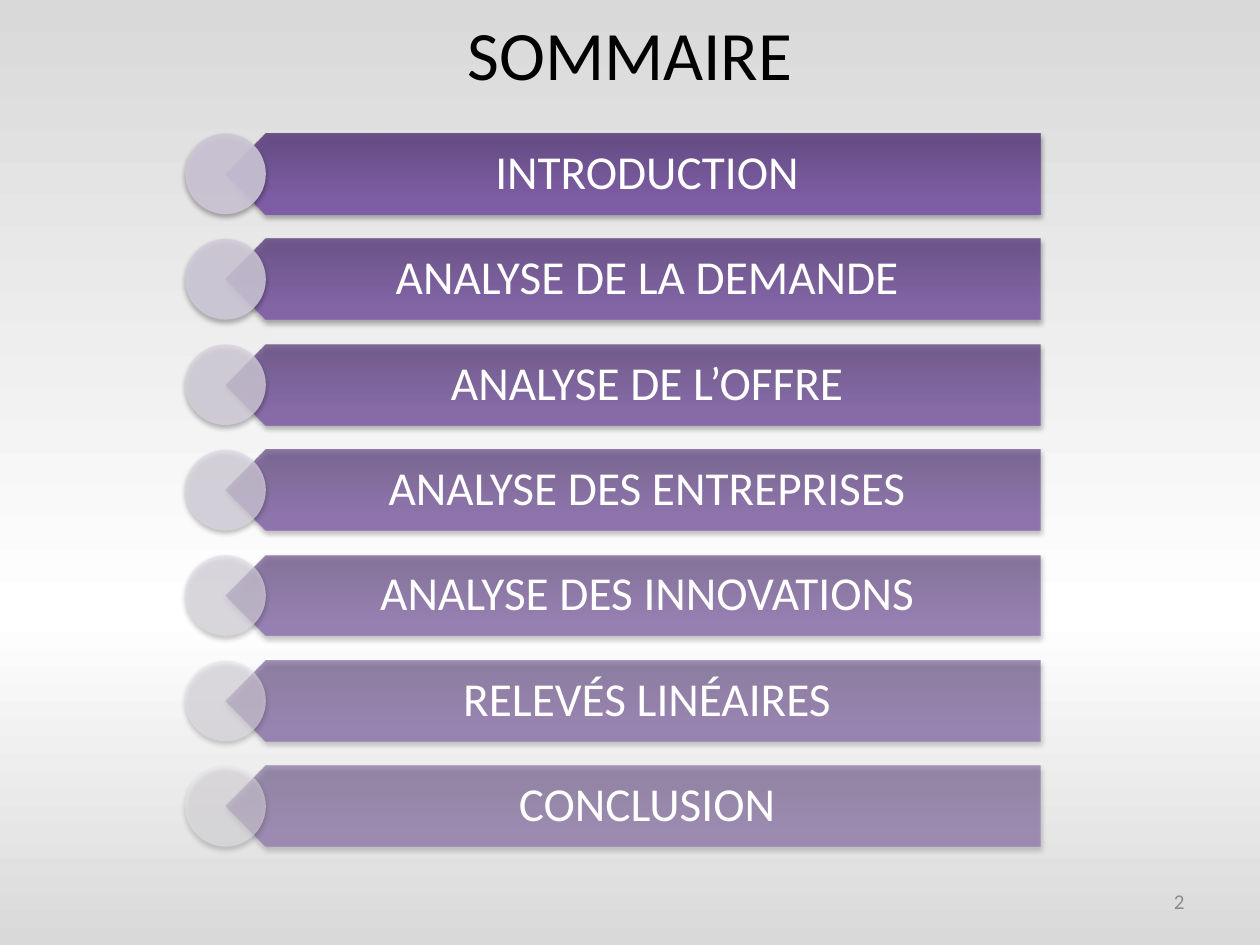
from dataclasses import dataclass

from lxml import etree
from pptx import Presentation
from pptx.dml.color import RGBColor
from pptx.enum import shapes, text
from pptx.oxml.ns import qn
from pptx.util import Inches, Pt

CHAPTERS = [
    "INTRODUCTION",
    "ANALYSE DE LA DEMANDE",
    "ANALYSE DE L’OFFRE",
    "ANALYSE DES ENTREPRISES",
    "ANALYSE DES INNOVATIONS",
    "RELEVÉS LINÉAIRES",
    "CONCLUSION",
]
FIRST_TOP, LAST_TOP, BAR_HEIGHT = 1.06, 6.08, 0.64


@dataclass(frozen=True)
class Theme:
    font: str = "Calibri"
    title_size: float = 39.6
    chapter_size: float = 27
    number_size: float = 12
    title_color: str = "000000"
    chapter_color: str = "FFFFFF"
    number_color: str = "8C8C8C"
    shadow_color: str = "000000"
    backdrop: tuple = ((0, "D9D9D9"), (65, "FFFFFF"), (100, "D9D9D9"))
    bar: tuple = ((0, "5F4480"), (80, "7B58A6"), (100, "7C57A8"))
    first_dot: tuple = (0xCD, 0xC6, 0xD7)
    last_dot: tuple = (0xED, 0xEA, 0xF0)
    first_opacity: float = 90
    last_opacity: float = 50


def blend(start, end, share):
    return start + (end - start) * share


def set_opacity(color_node, opacity):
    etree.SubElement(color_node, qn("a:alpha"), val=str(round(opacity * 1000)))


def add_color(parent, color, opacity=100):
    node = etree.SubElement(parent, qn("a:srgbClr"), val=color)
    if opacity < 100:
        set_opacity(node, opacity)


class Summary:
    def __init__(self, slide, theme):
        self.slide = slide
        self.theme = theme

    def gradient(self, fill, owner, stops, angle, opacity=100):
        """Fill with any number of stops; the angle runs clockwise."""
        fill.gradient()
        fill.gradient_angle = 360 - angle
        stop_list = owner.find(".//" + qn("a:gsLst"))
        for old_stop in list(stop_list):
            stop_list.remove(old_stop)
        for position, color in stops:
            stop = etree.SubElement(stop_list, qn("a:gs"), pos=str(position * 1000))
            add_color(stop, color, opacity)

    def shadow(self, shape):
        shape.shadow.inherit = False
        effects = shape._element.spPr.find(qn("a:effectLst"))
        outer = etree.SubElement(
            effects, qn("a:outerShdw"), blurRad=str(Pt(3.1)), dist=str(Pt(1.8)),
            dir="5400000", rotWithShape="0")
        add_color(outer, self.theme.shadow_color, 35)

    def set_words(self, frame, words, size, color, align):
        frame.word_wrap = True
        frame.vertical_anchor = text.MSO_ANCHOR.MIDDLE
        frame.text = words
        paragraph = frame.paragraphs[0]
        paragraph.alignment = align
        font = paragraph.runs[0].font
        font.name = self.theme.font
        font.size = Pt(size)
        font.color.rgb = RGBColor.from_string(color)
        return paragraph

    def background(self):
        self.gradient(self.slide.background.fill, self.slide._element,
                      self.theme.backdrop, 90)

    def title(self, words):
        title = self.slide.shapes.title
        title.left, title.top = Inches(0), Inches(0.14)
        title.width, title.height = Inches(10), Inches(0.55)
        self.set_words(title.text_frame, words, self.theme.title_size,
                       self.theme.title_color, text.PP_ALIGN.CENTER)

    def bar(self, group, top, opacity):
        bar = group.shapes.add_shape(
            shapes.MSO_SHAPE.PENTAGON, Inches(1.79), top, Inches(6.47), Inches(BAR_HEIGHT))
        bar.rotation = 180
        self.gradient(bar.fill, bar._element, self.theme.bar, 270, opacity)
        bar.line.fill.background()
        self.shadow(bar)

    def label(self, group, top, words):
        label = group.shapes.add_textbox(
            Inches(1.95), top, Inches(6.3), Inches(BAR_HEIGHT))
        frame = label.text_frame
        frame.margin_left, frame.margin_right = Inches(0.28), Inches(0.21)
        frame.margin_top = frame.margin_bottom = Inches(0.11)
        paragraph = self.set_words(frame, words, self.theme.chapter_size,
                                   self.theme.chapter_color, text.PP_ALIGN.CENTER)
        paragraph.line_spacing = 0.9

    def dot(self, group, top, share, opacity):
        dot = group.shapes.add_shape(
            shapes.MSO_SHAPE.OVAL, Inches(1.47), top, Inches(BAR_HEIGHT), Inches(BAR_HEIGHT))
        dot.fill.solid()
        dot.fill.fore_color.rgb = RGBColor(*(
            round(blend(start, end, share))
            for start, end in zip(self.theme.first_dot, self.theme.last_dot)))
        set_opacity(dot._element.spPr.find(qn("a:solidFill"))[0], opacity)
        dot.line.fill.background()
        self.shadow(dot)

    def chapters(self, names):
        """Stack the chapters evenly, fading from the first to the last."""
        group = self.slide.shapes.add_group_shape()
        for index, name in enumerate(names):
            share = index / (len(names) - 1)
            top = Inches(blend(FIRST_TOP, LAST_TOP, share))
            opacity = blend(self.theme.first_opacity, self.theme.last_opacity, share)
            self.bar(group, top, opacity)
            self.label(group, top, name)
            self.dot(group, top, share, opacity)

    def page_number(self, number):
        box = self.slide.shapes.add_textbox(
            Inches(7.17), Inches(6.95), Inches(2.33), Inches(0.4))
        self.set_words(box.text_frame, number, self.theme.number_size,
                       self.theme.number_color, text.PP_ALIGN.RIGHT)


def main():
    deck = Presentation()
    deck.slide_width, deck.slide_height = Inches(10), Inches(7.5)
    title_only = deck.slide_layouts[5]
    summary = Summary(deck.slides.add_slide(title_only), Theme())
    summary.background()
    summary.title("SOMMAIRE")
    summary.chapters(CHAPTERS)
    summary.page_number("2")
    deck.save("out.pptx")


if __name__ == "__main__":
    main()
